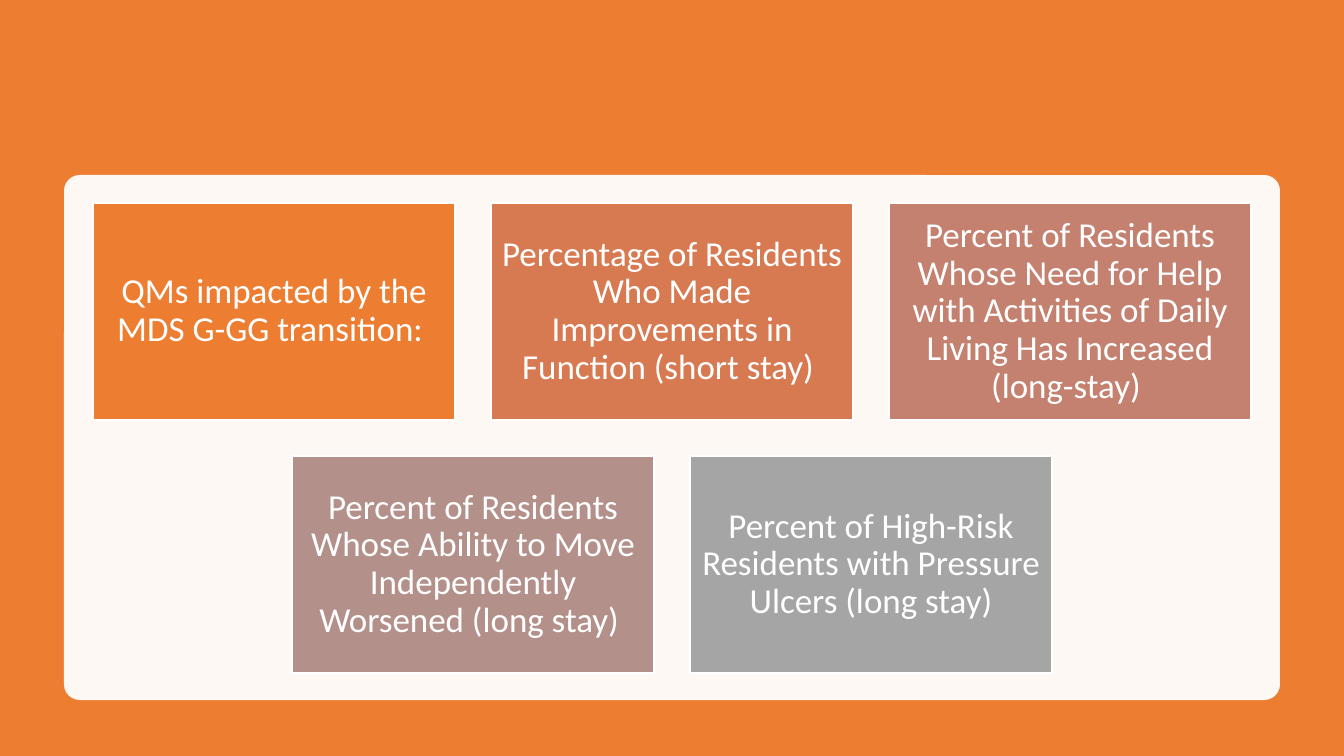
import pptx
import pptx.dml.color
import pptx.enum.shapes
import pptx.enum.text
import pptx.util
from lxml import etree

EMU_PER_PX = 914400 / 100.8
SLIDE_W, SLIDE_H = 1344, 756
CARD_W, CARD_H, GAP = 362, 217, 36
CARDS_TOP = 203
CARD_INSET = 10

# Each row of cards: (text, fill)
CARD_ROWS = [
    [
        ("QMs impacted by the MDS G-GG transition: ", "ED7D31"),
        ("Percentage of Residents Who Made Improvements in Function (short stay) ", "D87A51"),
        ("Percent of Residents Whose Need for Help with Activities of Daily Living "
         "Has Increased (long-stay) ", "C48170"),
    ],
    [
        ("Percent of Residents Whose Ability to Move Independently Worsened (long stay) ",
         "B4908B"),
        ("Percent of High-Risk Residents with Pressure Ulcers (long stay)", "A5A5A5"),
    ],
]


def px(length):
    return pptx.util.Emu(round(length * EMU_PER_PX))


def rgb(hex_colour):
    return pptx.dml.color.RGBColor.from_string(hex_colour)


def add_box(slide, left, top, width, height, fill, rounded=False):
    kinds = pptx.enum.shapes.MSO_SHAPE
    kind = kinds.ROUNDED_RECTANGLE if rounded else kinds.RECTANGLE
    box = slide.shapes.add_shape(kind, px(left), px(top), px(width), px(height))
    box.shadow.inherit = False
    box.fill.solid()
    box.fill.fore_color.rgb = rgb(fill)
    box.line.fill.background()
    return box


def set_opacity(shape, percent):
    colour = shape.fill._xPr.find(".//" + pptx.oxml.ns.qn("a:srgbClr"))
    alpha = etree.SubElement(colour, pptx.oxml.ns.qn("a:alpha"))
    alpha.set("val", str(percent * 1000))


def add_card(slide, left, top, text, fill):
    card = add_box(slide, left, top, CARD_W, CARD_H, fill)
    card.line.color.rgb = rgb("FFFFFF")
    card.line.width = pptx.util.Pt(1)

    frame = card.text_frame
    frame.word_wrap = True
    frame.vertical_anchor = pptx.enum.text.MSO_ANCHOR.MIDDLE
    frame.margin_left = frame.margin_right = px(CARD_INSET)
    frame.margin_top = frame.margin_bottom = px(CARD_INSET)

    measure = frame.paragraphs[0]
    measure.text = text
    measure.alignment = pptx.enum.text.PP_ALIGN.CENTER
    measure.line_spacing = 0.9
    measure.font.name = "Calibri"
    measure.font.size = pptx.util.Pt(25)
    measure.font.color.rgb = rgb("FFFFFF")


def add_card_row(slide, top, cards):
    """Place one row of cards, centred across the slide."""
    row_width = len(cards) * (CARD_W + GAP) - GAP
    row_left = (SLIDE_W - row_width) // 2
    for column, (text, fill) in enumerate(cards):
        add_card(slide, row_left + column * (CARD_W + GAP), top, text, fill)


def main():
    deck = pptx.Presentation()
    deck.slide_width, deck.slide_height = px(SLIDE_W), px(SLIDE_H)
    slide = deck.slides.add_slide(deck.slide_layouts[6])

    # Orange backdrop and translucent panel
    add_box(slide, 0, 0, SLIDE_W, SLIDE_H, "ED7D31")
    panel = add_box(slide, 64, 175, 1216, 525, "FFFFFF", rounded=True)
    panel.adjustments[0] = 0.03
    set_opacity(panel, 95)

    # Quality measure cards
    for row, cards in enumerate(CARD_ROWS):
        add_card_row(slide, CARDS_TOP + row * (CARD_H + GAP), cards)

    deck.save("out.pptx")


if __name__ == "__main__":
    main()
